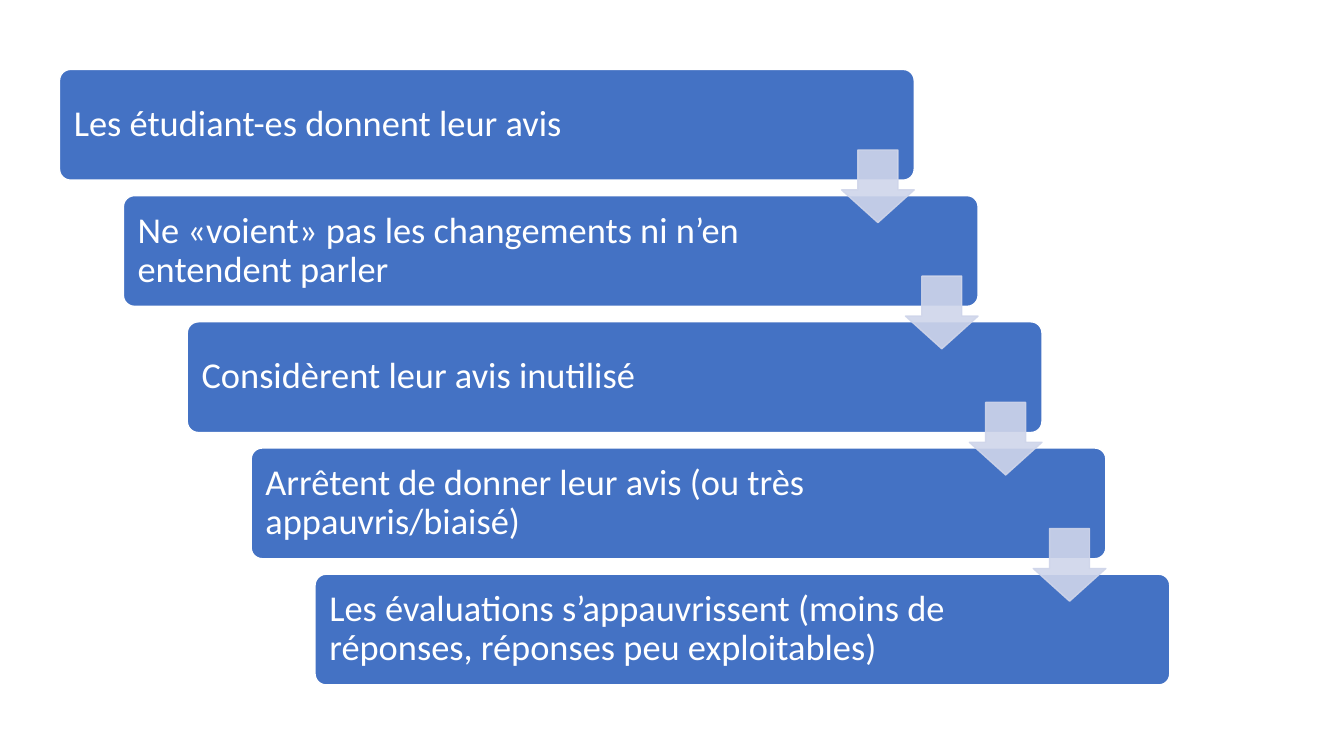
from dataclasses import dataclass

from lxml.etree import SubElement as Sub
from pptx import Presentation
from pptx.dml.color import RGBColor as RGB
from pptx.enum.shapes import MSO_SHAPE as Kind
from pptx.enum.text import MSO_ANCHOR as Anchor, PP_ALIGN as Align
from pptx.oxml.ns import qn
from pptx.util import Cm, Pt


@dataclass(frozen=True)
class Theme:
    blue: str = "4472C4"
    pale: str = "CFD5EA"
    white: str = "FFFFFF"
    font: str = "Calibri"
    size: int = 26
    line: int = 1
    alpha: int = 90


STEPS = [
    "Les étudiant-es donnent leur avis",
    "Ne «voient» pas les changements ni n’en entendent parler",
    "Considèrent leur avis inutilisé",
    "Arrêtent de donner leur avis (ou très appauvris/biaisé)",
    "Les évaluations s’appauvrissent (moins de réponses, réponses peu exploitables)",
]

# Stair layout, in centimetres
LEFT, TOP = 1.5, 1.75
WIDE, HIGH = 21.54, 2.79
RUN, RISE = 1.61, 3.18
PAD = 0.08
TEXT_W = 17.96
ARROW = 1.83
ARROW_X, ARROW_Y = 21.21, 3.78


def put(obj, vals):
    for name, val in vals.items():
        setattr(obj, name, val)


class Deck:
    def __init__(self, theme):
        self.theme = theme
        self.file = Presentation()
        put(self.file, {"slide_width": Cm(33.87), "slide_height": Cm(19.05)})
        self.slide = self.file.slides.add_slide(self.file.slide_layouts[6])

    def shape(self, kind, area, fill, edge, adjust):
        item = self.slide.shapes.add_shape(kind, *map(Cm, area))
        item.shadow.inherit = False
        for part, tint in ((item.fill, fill), (item.line.fill, edge)):
            part.solid()
            part.fore_color.rgb = RGB.from_string(tint)
        item.line.width = Pt(self.theme.line)
        for i, val in enumerate(adjust):
            item.adjustments[i] = val
        return item

    def bar(self, x, y):
        look = self.theme
        self.shape(Kind.ROUNDED_RECTANGLE, (x, y, WIDE, HIGH),
                   look.blue, look.white, [0.1])

    def label(self, x, y, text):
        look = self.theme
        area = (x + PAD, y + PAD, TEXT_W, HIGH - 2 * PAD)
        frame = self.slide.shapes.add_textbox(*map(Cm, area)).text_frame
        put(frame, {"word_wrap": True, "vertical_anchor": Anchor.MIDDLE})
        sides = ("left", "top", "right", "bottom")
        put(frame, {f"margin_{side}": Cm(0.28) for side in sides})
        para = frame.paragraphs[0]
        put(para, {"text": text, "alignment": Align.LEFT, "line_spacing": 0.9})
        font = para.runs[0].font
        put(font, {"name": look.font, "size": Pt(look.size)})
        font.color.rgb = RGB.from_string(look.white)

    def arrow(self, x, y):
        look = self.theme
        item = self.shape(Kind.DOWN_ARROW, (x, y, ARROW, ARROW),
                          look.pale, look.pale, [0.55, 0.45])
        # Make both fill and outline slightly transparent
        for tint in item._element.spPr.iter(qn("a:srgbClr")):
            Sub(tint, qn("a:alpha"), val=str(look.alpha * 1000))


def main():
    deck = Deck(Theme())

    # Stair of bars, each with its label
    for i, text in enumerate(STEPS):
        x, y = LEFT + i * RUN, TOP + i * RISE
        deck.bar(x, y)
        deck.label(x, y, text)

    # Arrows from each bar to the next
    for i in range(len(STEPS) - 1):
        deck.arrow(ARROW_X + i * RUN, ARROW_Y + i * RISE)

    deck.file.save("out.pptx")


if __name__ == "__main__":
    main()
